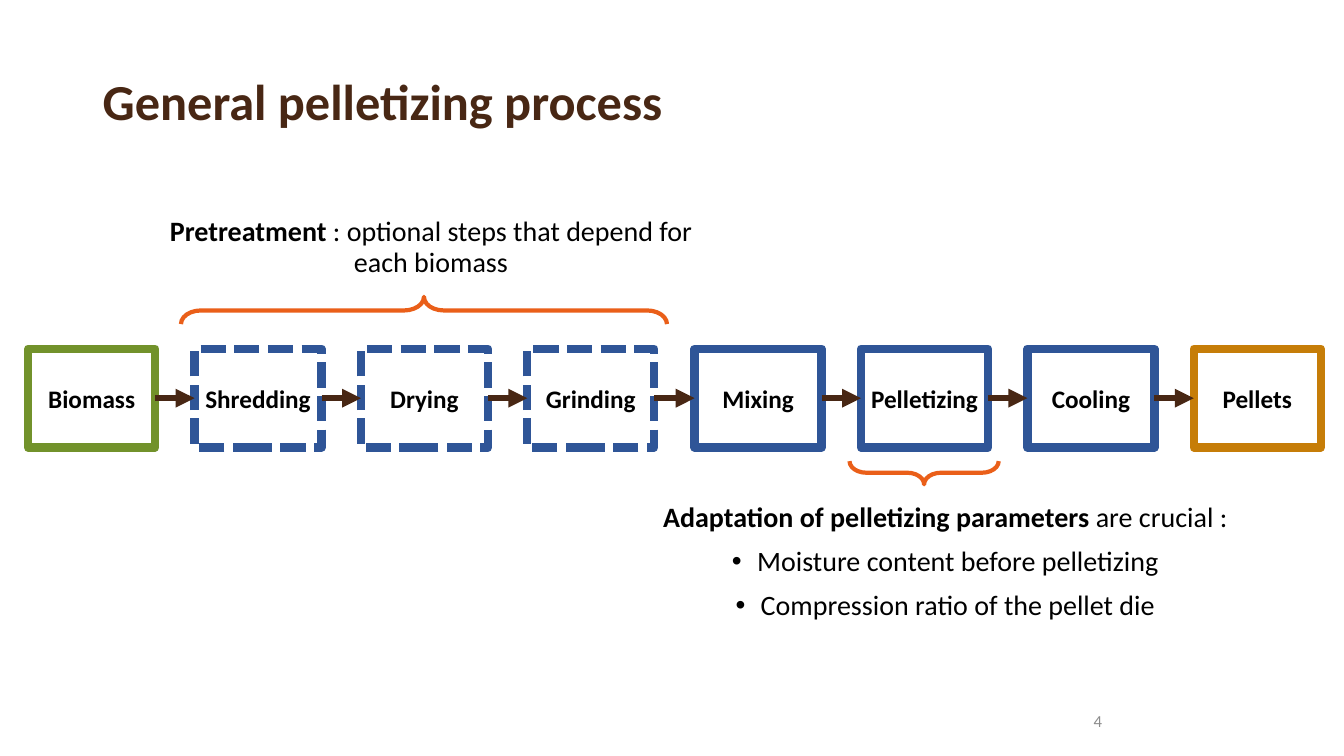
from dataclasses import dataclass

import lxml.etree
import pptx
import pptx.dml.color
import pptx.enum.dml
import pptx.enum.shapes
import pptx.enum.text
import pptx.oxml.ns
import pptx.util

PX = 9144  # EMU per px, 100 px to the inch
FONT = "Calibri"
BLACK, BROWN, GREY = "000000", "482714", "8C8C8C"
GREEN, BLUE, OCHRE, ORANGE = "72922B", "2F5597", "C67D08", "EA5F19"
ALIGN = pptx.enum.text.PP_ALIGN
ANCHOR = pptx.enum.text.MSO_ANCHOR
SHAPE = pptx.enum.shapes.MSO_SHAPE


@dataclass
class Step:
    name: str
    color: str
    optional: bool = False


@dataclass
class Brace:
    left: int
    top: int
    width: int
    height: int
    rotation: int


@dataclass
class Run:
    text: str
    size: int
    bold: bool = False
    color: str = BLACK


@dataclass
class Para:
    runs: list[Run]
    align: ALIGN = ALIGN.CENTER
    bullet: bool = False
    line_spacing: float = 0.9


@dataclass
class TextBlock:
    left: int
    top: int
    width: int
    height: int
    paras: list[Para]
    anchor: ANCHOR = ANCHOR.TOP


STEPS = [
    Step("Biomass", GREEN),
    Step("Shredding", BLUE, True),
    Step("Drying", BLUE, True),
    Step("Grinding", BLUE, True),
    Step("Mixing", BLUE),
    Step("Pelletizing", BLUE),
    Step("Cooling", BLUE),
    Step("Pellets", OCHRE),
]
FIRST_LEFT, LAST_LEFT = 28, 1184
STEP_TOP, STEP_WIDTH, STEP_HEIGHT = 346, 126, 98

BRACES = [Brace(407, 67, 27, 482, 270), Brace(905, 395, 23, 148, 90)]

TEXTS = [
    TextBlock(92, 40, 1002, 126, [
        Para([Run("General pelletizing process", 36, True, BROWN)], ALIGN.LEFT),
    ], ANCHOR.MIDDLE),
    TextBlock(154, 211, 547, 70, [
        Para([Run("Pretreatment", 20, True),
              Run(" : optional steps that depend for each biomass", 20)]),
    ]),
    TextBlock(634, 494, 607, 162, [
        Para([Run("Adaptation of pelletizing parameters ", 20, True),
              Run("are crucial :", 20)]),
        Para([Run("Moisture content before pelletizing", 20)], bullet=True),
        Para([Run("Compression ratio of the pellet die", 20)], bullet=True),
    ]),
    TextBlock(942, 695, 161, 40, [
        Para([Run("4", 12, color=GREY)], ALIGN.RIGHT, line_spacing=1.0),
    ], ANCHOR.MIDDLE),
]


def px(n: int) -> pptx.util.Emu:
    return pptx.util.Emu(n * PX)


def rgb(color: str) -> pptx.dml.color.RGBColor:
    return pptx.dml.color.RGBColor.from_string(color)


def add_child(parent, tag: str, **attrs: str) -> None:
    lxml.etree.SubElement(parent, pptx.oxml.ns.qn(tag), attrs)


def set_line(line, color: str, width: float) -> None:
    line.color.rgb = rgb(color)
    line.width = pptx.util.Pt(width)


def add_run(p, run: Run) -> None:
    r = p.add_run()
    r.text = run.text
    r.font.name = FONT
    r.font.size = pptx.util.Pt(run.size)
    r.font.bold = run.bold
    r.font.color.rgb = rgb(run.color)


def add_bullet(p) -> None:
    """Give the paragraph a round bullet with a hanging indent."""
    pPr = p._p.get_or_add_pPr()
    pPr.set("marL", str(px(25)))
    pPr.set("indent", str(px(-25)))
    add_child(pPr, "a:buFont", typeface="Arial")
    add_child(pPr, "a:buChar", char="•")


def add_text(shapes, block: TextBlock) -> None:
    sp = shapes.add_textbox(px(block.left), px(block.top),
                            px(block.width), px(block.height))
    tf = sp.text_frame
    tf.word_wrap = True
    tf.vertical_anchor = block.anchor
    for i, para in enumerate(block.paras):
        p = tf.add_paragraph() if i else tf.paragraphs[0]
        p.alignment = para.align
        p.line_spacing = para.line_spacing
        if i:
            p.space_before = pptx.util.Pt(10)
        if para.bullet:
            add_bullet(p)
        for run in para.runs:
            add_run(p, run)


def add_step(shapes, step: Step, left: int):
    sp = shapes.add_shape(SHAPE.RECTANGLE, px(left), px(STEP_TOP),
                          px(STEP_WIDTH), px(STEP_HEIGHT))
    sp.shadow.inherit = False
    sp.fill.background()
    set_line(sp.line, step.color, 6)
    if step.optional:
        sp.line.dash_style = pptx.enum.dml.MSO_LINE.SQUARE_DOT
    tf = sp.text_frame
    tf.word_wrap = False
    tf.vertical_anchor = ANCHOR.MIDDLE
    p = tf.paragraphs[0]
    p.alignment = ALIGN.CENTER
    add_run(p, Run(step.name, 18, True))
    return sp


def add_arrow(shapes, start, end) -> None:
    """Join the right side of start to the left side of end."""
    line = shapes.add_connector(pptx.enum.shapes.MSO_CONNECTOR.STRAIGHT, 0, 0, 0, 0)
    line.begin_connect(start, 3)
    line.end_connect(end, 1)
    set_line(line.line, BROWN, 4.5)
    add_child(line.line._get_or_add_ln(), "a:tailEnd", type="triangle")
    add_child(line._element.spPr, "a:effectLst")


def add_brace(shapes, brace: Brace) -> None:
    sp = shapes.add_shape(SHAPE.RIGHT_BRACE, px(brace.left), px(brace.top),
                          px(brace.width), px(brace.height))
    sp.rotation = brace.rotation
    sp.adjustments[0] = 0.73
    sp.adjustments[1] = 0.5
    sp.shadow.inherit = False
    sp.fill.background()
    set_line(sp.line, ORANGE, 3)


def main() -> None:
    prs = pptx.Presentation()
    prs.slide_width, prs.slide_height = px(1333), px(750)
    shapes = prs.slides.add_slide(prs.slide_layouts[6]).shapes
    pitch = (LAST_LEFT - FIRST_LEFT) / (len(STEPS) - 1)
    boxes = [add_step(shapes, step, FIRST_LEFT + round(i * pitch))
             for i, step in enumerate(STEPS)]
    for start, end in zip(boxes, boxes[1:]):
        add_arrow(shapes, start, end)
    for brace in BRACES:
        add_brace(shapes, brace)
    for block in TEXTS:
        add_text(shapes, block)
    prs.save("out.pptx")


if __name__ == "__main__":
    main()
